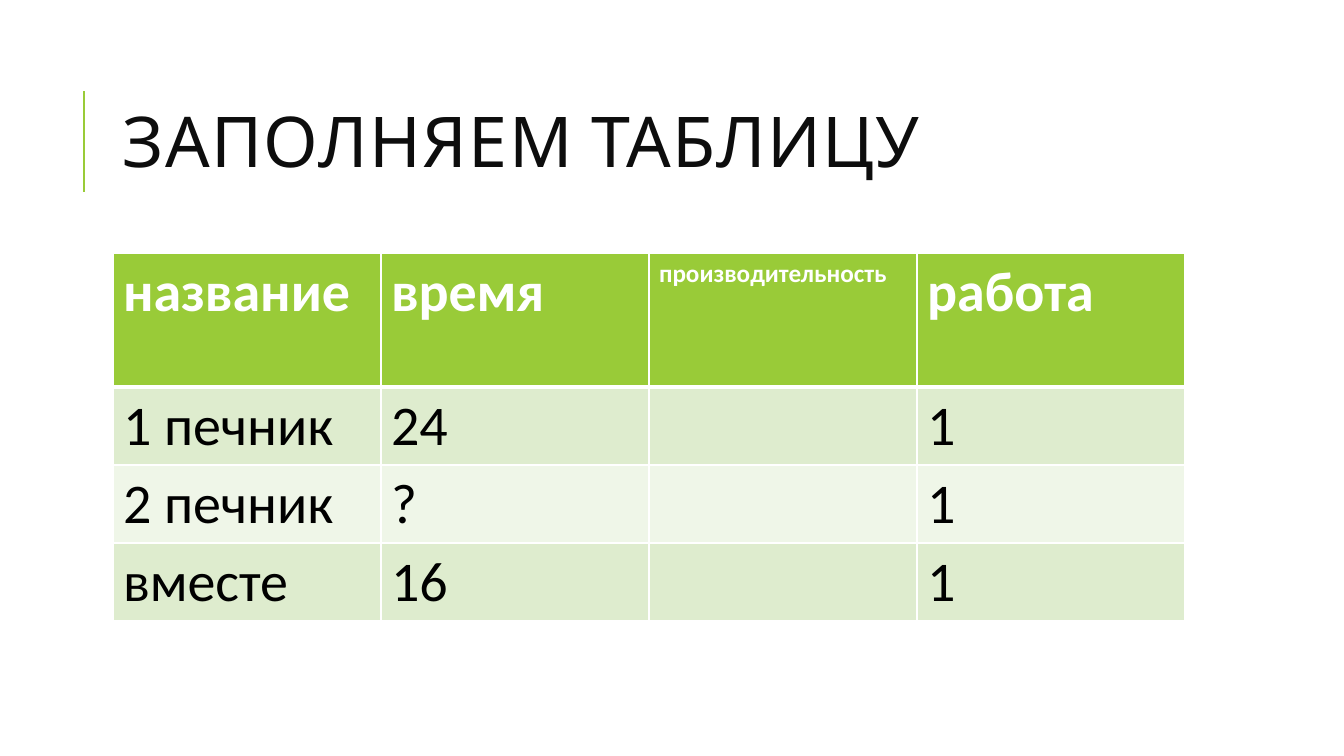
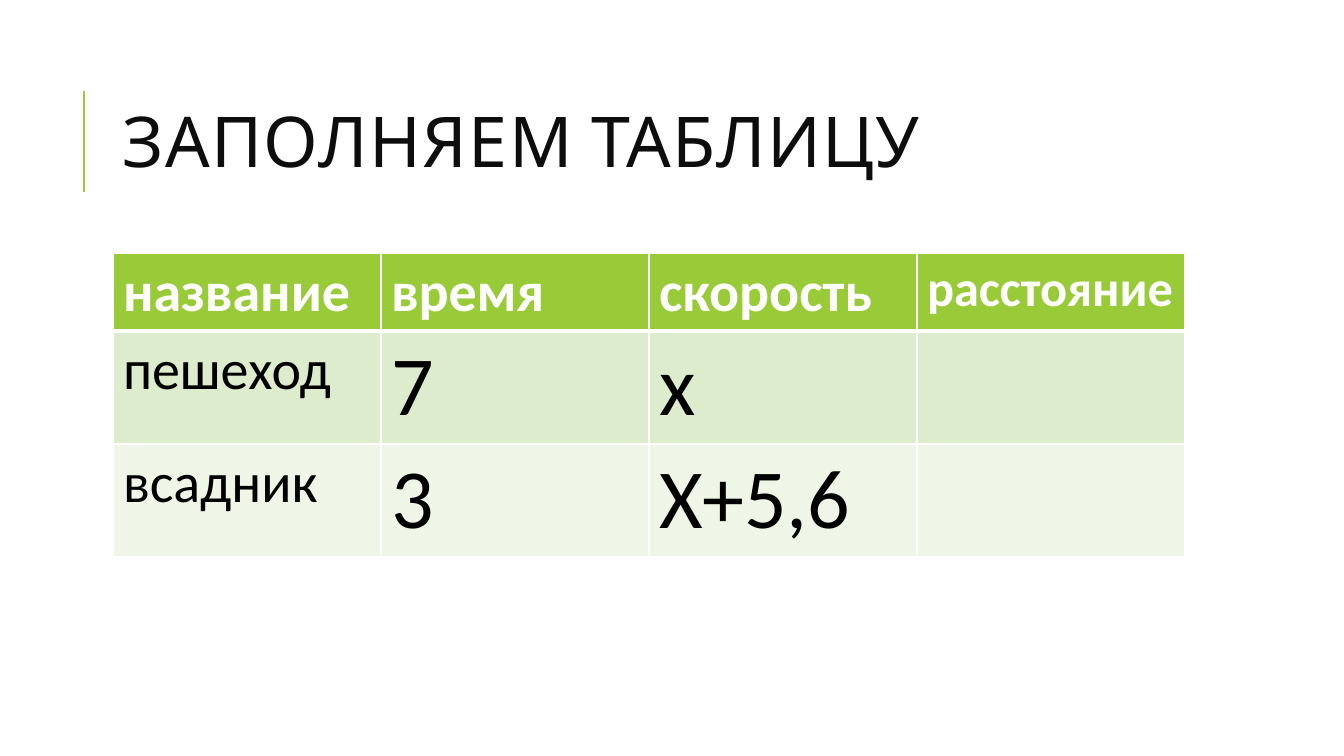
"""Build two slides, each with a title and a table for a word problem."""
from lxml.etree import SubElement
from pptx import Presentation
from pptx.dml.color import RGBColor
from pptx.enum.shapes import MSO_CONNECTOR
from pptx.enum.text import MSO_ANCHOR
from pptx.oxml.ns import qn
from pptx.util import Emu, Pt

COLORS = {
    "accent": "99CB38",
    "title": "0D0D0D",
    "text": "000000",
    "white": "FFFFFF",
    "odd_row": "DEECCE",
    "even_row": "EFF6E8",
}
TITLE_FONT = "Cabin"
BODY_FONT = "Calibri"
BODY_SIZE = 40
TITLE = "ЗАПОЛНЯЕМ ТАБЛИЦУ"
LEFT, CONTENT_WIDTH, TABLE_TOP = 113, 1072, 253

TABLES = [
    {
        "row_heights": [134, 78, 78, 78],
        "rows": [
            ["название", "время", "производительность", "работа"],
            ["1 печник", "24", "", "1"],
            ["2 печник", "?", "", "1"],
            ["вместе", "16", "", "1"],
        ],
        "sizes": {"производительность": 18},
    },
    {
        "row_heights": [78, 113, 113],
        "rows": [
            ["название", "время", "скорость", "расстояние"],
            ["пешеход", "7", "х", ""],
            ["всадник", "3", "Х+5,6", ""],
        ],
        "sizes": {"расстояние": 36, "7": 60, "х": 60, "3": 60, "Х+5,6": 60},
    },
]


def px(length):
    return Emu(round(length * 914400 / 100.8))


def set_borders(cell, top, bottom):
    properties = cell._tc.get_or_add_tcPr()
    for side, width in (("L", 1), ("R", 1), ("T", top), ("B", bottom)):
        line = SubElement(properties, qn(f"a:ln{side}"), w=str(Pt(width)))
        fill = SubElement(line, qn("a:solidFill"))
        SubElement(fill, qn("a:srgbClr"), val=COLORS["white"])


presentation = Presentation()
presentation.slide_width = px(1344)
presentation.slide_height = px(756)

for content in TABLES:
    slide = presentation.slides.add_slide(presentation.slide_layouts[6])

    title_bar = slide.shapes.add_connector(
        MSO_CONNECTOR.STRAIGHT, px(84), px(192), px(84), px(91))
    title_bar.line.color.rgb = RGBColor.from_string(COLORS["accent"])
    title_bar.line.width = Pt(1.5)
    SubElement(title_bar._element.spPr, qn("a:effectLst"))

    title = slide.shapes.add_textbox(px(LEFT), px(65), px(CONTENT_WIDTH), px(165))
    title.text_frame.word_wrap = True
    title.text_frame.vertical_anchor = MSO_ANCHOR.MIDDLE
    paragraph = title.text_frame.paragraphs[0]
    paragraph.line_spacing = 0.8
    run = paragraph.add_run()
    run.text = TITLE
    run.font.name = TITLE_FONT
    run.font.size = Pt(50)
    run.font.color.rgb = RGBColor.from_string(COLORS["title"])
    run.font._element.set("spc", "100")

    rows, heights = content["rows"], content["row_heights"]
    table = slide.shapes.add_table(
        len(rows), len(rows[0]), px(LEFT), px(TABLE_TOP),
        px(CONTENT_WIDTH), px(sum(heights))).table
    for column in table.columns:
        column.width = px(CONTENT_WIDTH / len(rows[0]))

    for row_index, (texts, height) in enumerate(zip(rows, heights)):
        table.rows[row_index].height = px(height)
        is_header = row_index == 0
        band = "accent" if is_header else "odd_row" if row_index % 2 else "even_row"
        for column_index, text in enumerate(texts):
            cell = table.cell(row_index, column_index)
            set_borders(cell, 3 if row_index == 1 else 1, 3 if is_header else 1)
            cell.fill.solid()
            cell.fill.fore_color.rgb = RGBColor.from_string(COLORS[band])
            cell.text = text
            font = cell.text_frame.paragraphs[0].font
            font.name = BODY_FONT
            font.size = Pt(content["sizes"].get(text, BODY_SIZE))
            font.bold = is_header
            font.color.rgb = RGBColor.from_string(
                COLORS["white" if is_header else "text"])

presentation.save("out.pptx")
